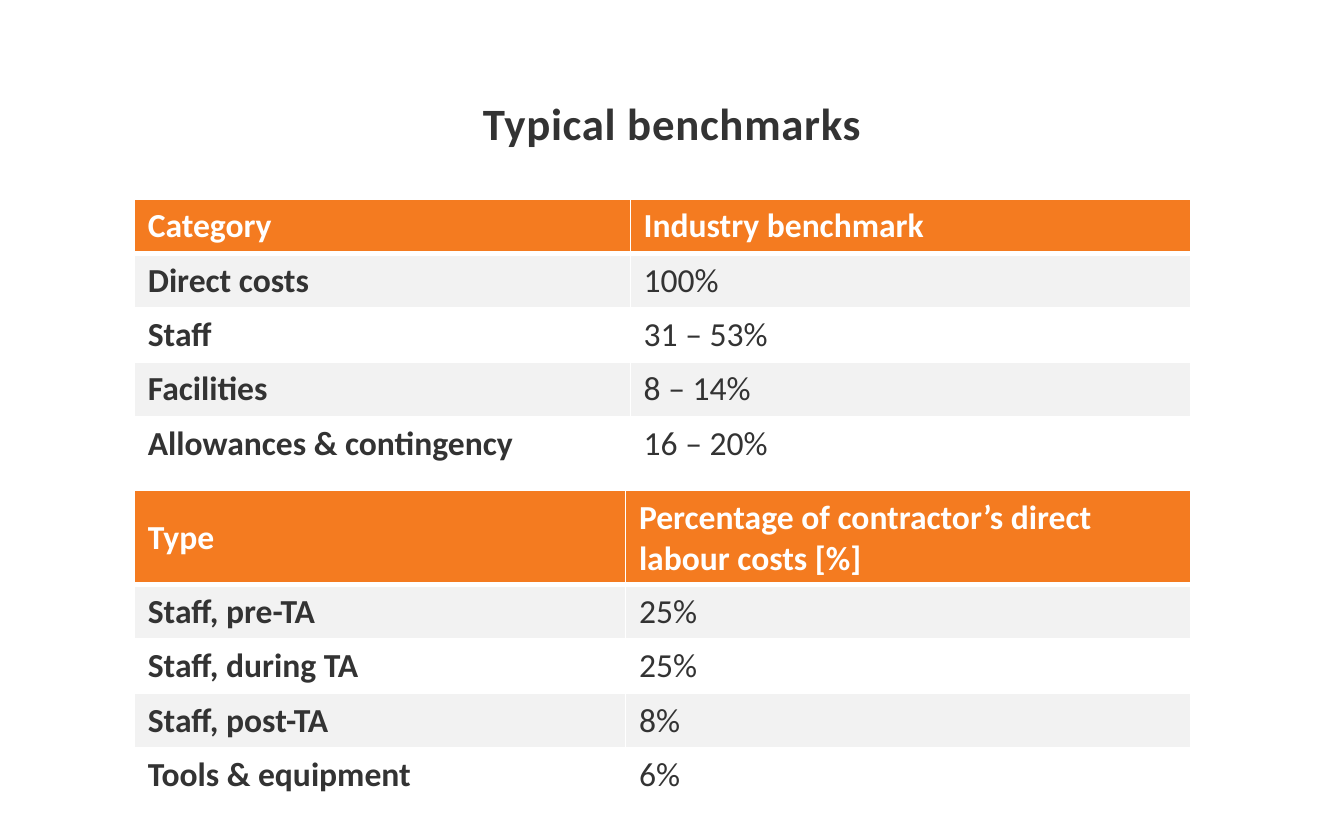
import pptx
import pptx.dml.color
import pptx.enum.text
import pptx.oxml
import pptx.oxml.ns
import pptx.util

EMU_PER_PX = 4572  # 200 px to the inch
FONT = "Calibri"
ORANGE, GREY, WHITE, DARK = "F47B20", "F2F2F2", "FFFFFF", "333333"
ROW_HEIGHT = 81
THIN, THICK = 1, 3


def px(length):
    return pptx.util.Emu(length * EMU_PER_PX)


def color(value):
    return pptx.dml.color.RGBColor.from_string(value)


class Deck:
    def __init__(self, width, height):
        self.presentation = pptx.Presentation()
        self.presentation.slide_width = px(width)
        self.presentation.slide_height = px(height)
        self.slide = None

    def add_slide(self):
        blank = self.presentation.slide_layouts[6]
        self.slide = self.presentation.slides.add_slide(blank)
        self.slide.background.fill.solid()
        self.slide.background.fill.fore_color.rgb = color(WHITE)

    def add_run(self, paragraph, text, size, ink, bold):
        run = paragraph.add_run()
        run.text = text
        run.font.name = FONT
        run.font.size = pptx.util.Pt(size)
        run.font.bold = bold
        run.font.color.rgb = color(ink)
        return run

    def add_title(self, text, left, top, width, height):
        shape = self.slide.shapes.add_textbox(px(left), px(top), px(width), px(height))
        frame = shape.text_frame
        frame.word_wrap = True
        frame.vertical_anchor = pptx.enum.text.MSO_ANCHOR.MIDDLE
        paragraph = frame.paragraphs[0]
        paragraph.alignment = pptx.enum.text.PP_ALIGN.CENTER
        run = self.add_run(paragraph, text, 24, DARK, True)
        run.font._element.set("spc", "40")

    def add_borders(self, cell, top, bottom):
        properties = cell._tc.get_or_add_tcPr()
        for side, points in (("L", THIN), ("R", THIN), ("T", top), ("B", bottom)):
            properties.append(pptx.oxml.parse_xml(
                f'<a:ln{side} {pptx.oxml.ns.nsdecls("a")} w="{pptx.util.Pt(points)}">'
                f'<a:solidFill><a:srgbClr val="{WHITE}"/></a:solidFill></a:ln{side}>'))

    def add_table(self, rows, left, top, column_widths):
        shape = self.slide.shapes.add_table(
            len(rows), len(column_widths), px(left), px(top),
            px(sum(column_widths)), px(ROW_HEIGHT * len(rows)))
        table = shape.table
        table.horz_banding = False
        for column, width in zip(table.columns, column_widths):
            column.width = px(width)
        for row_index, texts in enumerate(rows):
            table.rows[row_index].height = px(ROW_HEIGHT)
            header = row_index == 0
            fill = ORANGE if header else (GREY if row_index % 2 else WHITE)
            for column_index, text in enumerate(texts):
                cell = table.cell(row_index, column_index)
                # The heavy rule lies between the header and the first body row
                self.add_borders(cell, THICK if row_index == 1 else THIN,
                                 THICK if header else THIN)
                cell.fill.solid()
                cell.fill.fore_color.rgb = color(fill)
                cell.vertical_anchor = pptx.enum.text.MSO_ANCHOR.MIDDLE
                self.add_run(cell.text_frame.paragraphs[0], text, 18,
                             WHITE if header else DARK, header or column_index == 0)


def main():
    deck = Deck(2000, 1250)
    deck.add_slide()

    # Title
    deck.add_title("Typical benchmarks", 106, 120, 1788, 126)

    # Benchmarks by cost category
    deck.add_table([
        ("Category", "Industry benchmark"),
        ("Direct costs", "100%"),
        ("Staff", "31 – 53%"),
        ("Facilities", "8 – 14%"),
        ("Allowances & contingency", "16 – 20%"),
    ], 200, 296, (738, 834))

    # Benchmarks relative to direct labour costs
    deck.add_table([
        ("Type", "Percentage of contractor’s direct labour costs [%]"),
        ("Staff, pre-TA", "25%"),
        ("Staff, during TA", "25%"),
        ("Staff, post-TA", "8%"),
        ("Tools & equipment", "6%"),
    ], 200, 730, (731, 841))

    deck.presentation.save("out.pptx")


if __name__ == "__main__":
    main()
